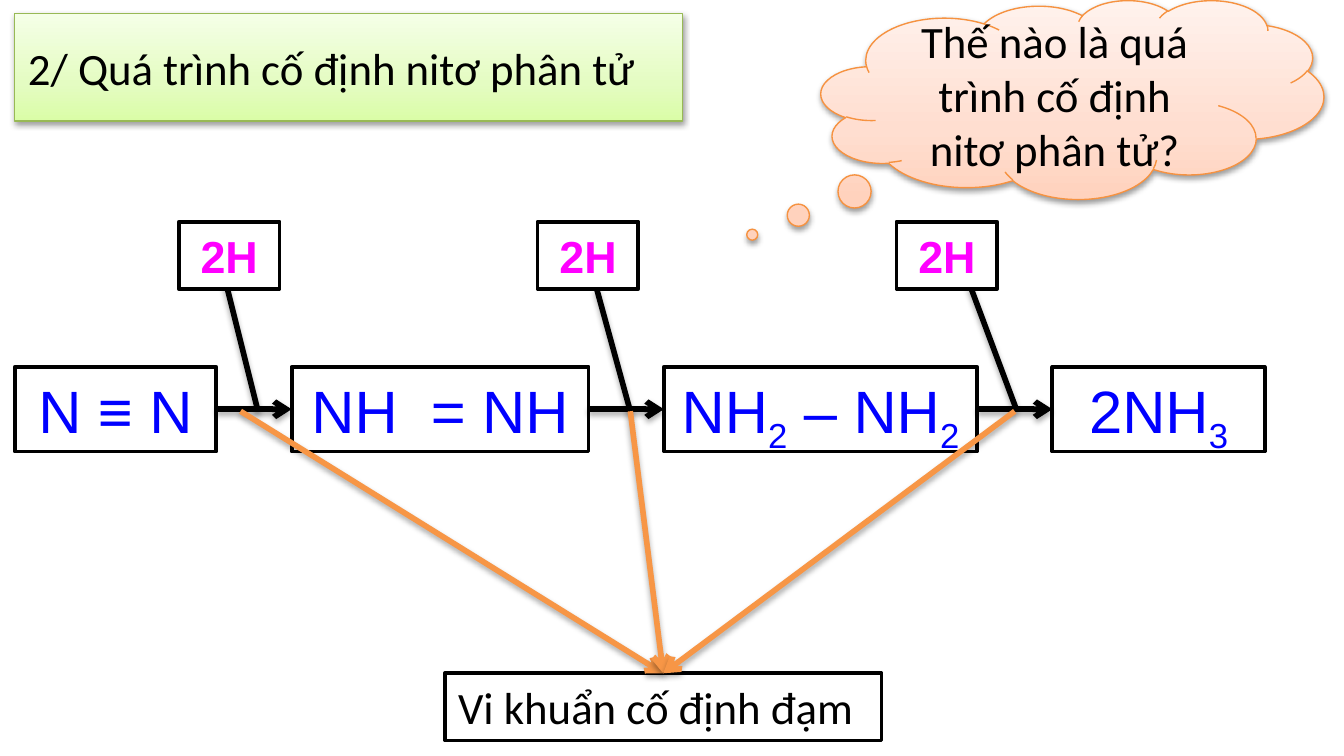
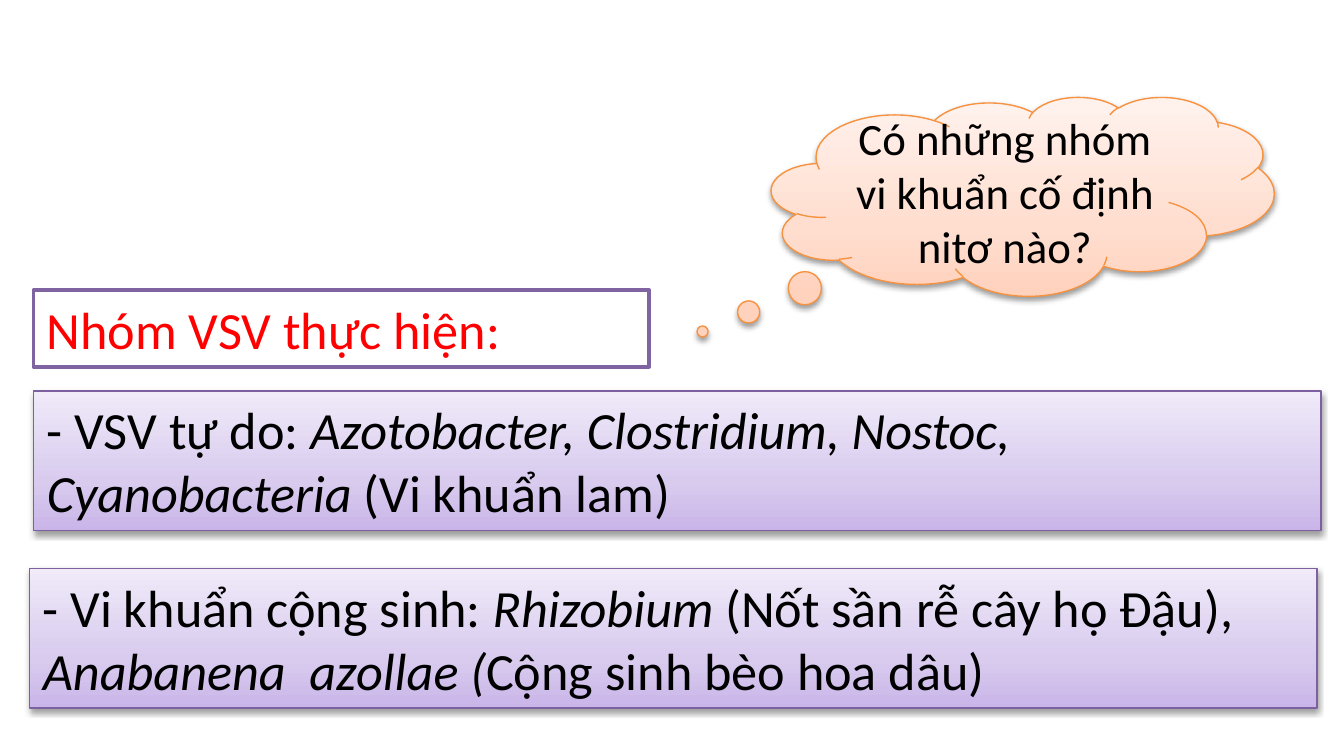
from lxml import etree
from copy import deepcopy
from pptx import Presentation
from pptx.dml.color import RGBColor
from pptx.enum.shapes import MSO_CONNECTOR, MSO_SHAPE
from pptx.enum.text import MSO_ANCHOR, MSO_AUTO_SIZE, PP_ALIGN
from pptx.oxml.ns import qn
from pptx.util import Emu, Pt

PX = 9144
SLIDE_W = 1000

RECT, CLOUD = MSO_SHAPE.RECTANGLE, MSO_SHAPE.CLOUD_CALLOUT
STRAIGHT = MSO_CONNECTOR.STRAIGHT
TOP, MIDDLE = MSO_ANCHOR.TOP, MSO_ANCHOR.MIDDLE
LEFT, CENTER, JUSTIFY = PP_ALIGN.LEFT, PP_ALIGN.CENTER, PP_ALIGN.JUSTIFY
GROW = MSO_AUTO_SIZE.SHAPE_TO_FIT_TEXT
SIDE_TOP, SIDE_LEFT, SIDE_RIGHT = 0, 1, 3

BLACK = RGBColor(0x00, 0x00, 0x00)
WHITE = RGBColor(0xFF, 0xFF, 0xFF)
RED = RGBColor(0xFF, 0x00, 0x00)
BLUE = RGBColor(0x00, 0x00, 0xFF)
MAGENTA = RGBColor(0xFF, 0x00, 0xFF)
PURPLE = RGBColor(0x80, 0x64, 0xA2)
ORANGE = RGBColor(0xF7, 0x96, 0x46)
GREEN_EDGE = RGBColor(0x98, 0xB9, 0x55)
ORANGE_EDGE = RGBColor(0xF6, 0x92, 0x40)
PURPLE_EDGE = RGBColor(0x7D, 0x60, 0xA0)
GREEN_FADE = (RGBColor(0xDA, 0xFD, 0xA7), RGBColor(0xE4, 0xFC, 0xC2), RGBColor(0xF5, 0xFF, 0xE7))
ORANGE_FADE = (RGBColor(0xFF, 0xD2, 0xBD), RGBColor(0xFF, 0xDE, 0xD0), RGBColor(0xFF, 0xF2, 0xED))
PURPLE_FADE = (RGBColor(0xC9, 0xB5, 0xE8), RGBColor(0xD8, 0xCB, 0xEE), RGBColor(0xF0, 0xEA, 0xF9))
FADE_POSITIONS = (0, 0.35, 1)

PLAIN, ITALIC, SUBSCRIPT = "plain", "italic", "subscript"


def px(length):
    return Emu(length * PX)


def add_shadow(spPr, distance, alpha):
    effects = spPr.find(qn("a:effectLst"))
    if effects is None:
        effects = etree.SubElement(spPr, qn("a:effectLst"))
    shadow = etree.SubElement(effects, qn("a:outerShdw"), blurRad="40000",
                              dist=str(distance), dir="5400000", rotWithShape="0")
    color = etree.SubElement(shadow, qn("a:srgbClr"), val="000000")
    etree.SubElement(color, qn("a:alpha"), val=str(alpha * 1000))


def add_panel(slide, box, edge, edge_width, kind=RECT):
    panel = slide.shapes.add_shape(kind, *map(px, box))
    panel.shadow.inherit = False
    panel.line.color.rgb = edge
    panel.line.width = Pt(edge_width)
    return panel


def add_faded_panel(slide, box, edge, fade, kind=RECT):
    panel = add_panel(slide, box, edge, 0.75, kind)
    panel.fill.gradient()
    panel.fill.gradient_angle = 90
    spPr = panel._element.spPr
    stops = spPr.find(qn("a:gradFill")).find(qn("a:gsLst"))
    stops.append(deepcopy(stops[-1]))
    for stop, color, position in zip(panel.fill.gradient_stops, fade, FADE_POSITIONS):
        stop.color.rgb = color
        stop.position = position
    add_shadow(spPr, 20000, 38)
    return panel


def add_framed_panel(slide, box, edge=BLACK):
    panel = add_panel(slide, box, edge, 2)
    panel.fill.solid()
    panel.fill.fore_color.rgb = WHITE
    return panel


def write(panel, pieces, size, color=BLACK, font="Calibri", align=LEFT, bold=False, anchor=TOP):
    frame = panel.text_frame
    frame.word_wrap = True
    frame.vertical_anchor = anchor
    if anchor == TOP:
        frame.auto_size = GROW
    paragraph = frame.paragraphs[0]
    paragraph.alignment = align
    for words, style in pieces:
        run = paragraph.add_run()
        run.text = words
        run.font.name = font
        run.font.size = Pt(size)
        run.font.bold = bold
        run.font.italic = style == ITALIC
        run.font.color.rgb = color
        if style == SUBSCRIPT:
            run._r.get_or_add_rPr().set("baseline", "-25000")


def add_link(slide, start, end, color=BLACK, arrow=True):
    link = slide.shapes.add_connector(STRAIGHT, *map(px, (*start, *end)))
    link.line.color.rgb = color
    link.line.width = Pt(3)
    spPr = link._element.spPr
    if arrow:
        etree.SubElement(spPr.find(qn("a:ln")), qn("a:tailEnd"), type="arrow")
    add_shadow(spPr, 23000, 35)
    return link


def section_heading(slide, box, title):
    heading = add_faded_panel(slide, box, GREEN_EDGE, GREEN_FADE)
    write(heading, [(title, PLAIN)], 24, align=JUSTIFY, anchor=MIDDLE)


def thought_cloud(slide, left, top, question):
    cloud = add_faded_panel(slide, (left, top, 374, 148), ORANGE_EDGE, ORANGE_FADE, CLOUD)
    cloud.adjustments[0] = -0.637
    cloud.adjustments[1] = 0.68
    write(cloud, [(question, PLAIN)], 24, align=CENTER, anchor=MIDDLE)


def fixation_diagram(slide, left, top):
    def at(x, y):
        return left + x, top + y

    hydrogen_links = [((156, 41), (181, 141)), ((433, 50), (458, 141)), ((711, 48), (745, 139))]
    for index, (start, end) in enumerate(hydrogen_links):
        add_link(slide, at(*start), at(*end), arrow=False)
        hydrogen = add_framed_panel(slide, (*at(122 + 267 * index, 0), 75, 50))
        write(hydrogen, [("2H", PLAIN)], 24, MAGENTA, "Arial", CENTER, bold=True)

    compounds = [
        (0, 150, [("N ≡ N", PLAIN)]),
        (206, 221, [("NH  = NH", PLAIN)]),
        (483, 233, [("NH", PLAIN), ("2", SUBSCRIPT), (" – NH", PLAIN), ("2", SUBSCRIPT)]),
        (772, 158, [("2NH", PLAIN), ("3", SUBSCRIPT)]),
    ]
    steps = []
    for x, width, formula in compounds:
        compound = add_framed_panel(slide, (*at(x, 108), width, 63))
        write(compound, formula, 32, BLUE, "Arial", CENTER)
        steps.append(compound)
    for before, after in zip(steps, steps[1:]):
        reaction = add_link(slide, at(0, 139), at(0, 139))
        reaction.begin_connect(before, SIDE_RIGHT)
        reaction.end_connect(after, SIDE_LEFT)

    bacteria = add_framed_panel(slide, (*at(320, 336), 325, 50))
    write(bacteria, [("Vi khuẩn cố định đạm", PLAIN)], 24)
    for x in (168, 458, 744):
        agent = add_link(slide, at(x, 141), at(483, 336), ORANGE)
        agent.end_connect(bacteria, SIDE_TOP)


def group_title(slide, box, title):
    panel = add_framed_panel(slide, box, PURPLE)
    write(panel, [(title, PLAIN)], 28, RED)


def microbe_group(slide, box, pieces):
    panel = add_faded_panel(slide, box, PURPLE_EDGE, PURPLE_FADE)
    write(panel, pieces, 28)


def process_slide(slide):
    section_heading(slide, (11, 10, 497, 80), "2/ Quá trình cố định nitơ phân tử")
    thought_cloud(slide, 611, 0, "Thế nào là quá trình cố định nitơ phân tử?")
    fixation_diagram(slide, 11, 165)


def microbes_slide(slide):
    thought_cloud(slide, 574, 72, "Có những nhóm vi khuẩn cố định nitơ nào?")
    group_title(slide, (25, 216, 458, 57), "Nhóm VSV thực hiện:")
    microbe_group(slide, (25, 291, 958, 104), [
        ("- VSV tự do: ", PLAIN),
        ("Azotobacter, Clostridium, Nostoc, Cyanobacteria ", ITALIC),
        ("(Vi khuẩn lam)", PLAIN),
    ])
    microbe_group(slide, (22, 423, 958, 104), [
        ("- Vi khuẩn cộng sinh: ", PLAIN),
        ("Rhizobium", ITALIC),
        (" (Nốt sần rễ cây họ Đậu), ", PLAIN),
        ("Anabanena  azollae (", ITALIC),
        ("Cộng sinh bèo hoa dâu)", PLAIN),
    ])


def main():
    deck = Presentation()
    deck.slide_width = px(SLIDE_W)
    deck.slide_height = px(SLIDE_W) * 9 // 16
    blank = deck.slide_layouts[6]
    for build in (process_slide, microbes_slide):
        build(deck.slides.add_slide(blank))
    deck.save("out.pptx")


if __name__ == "__main__":
    main()
